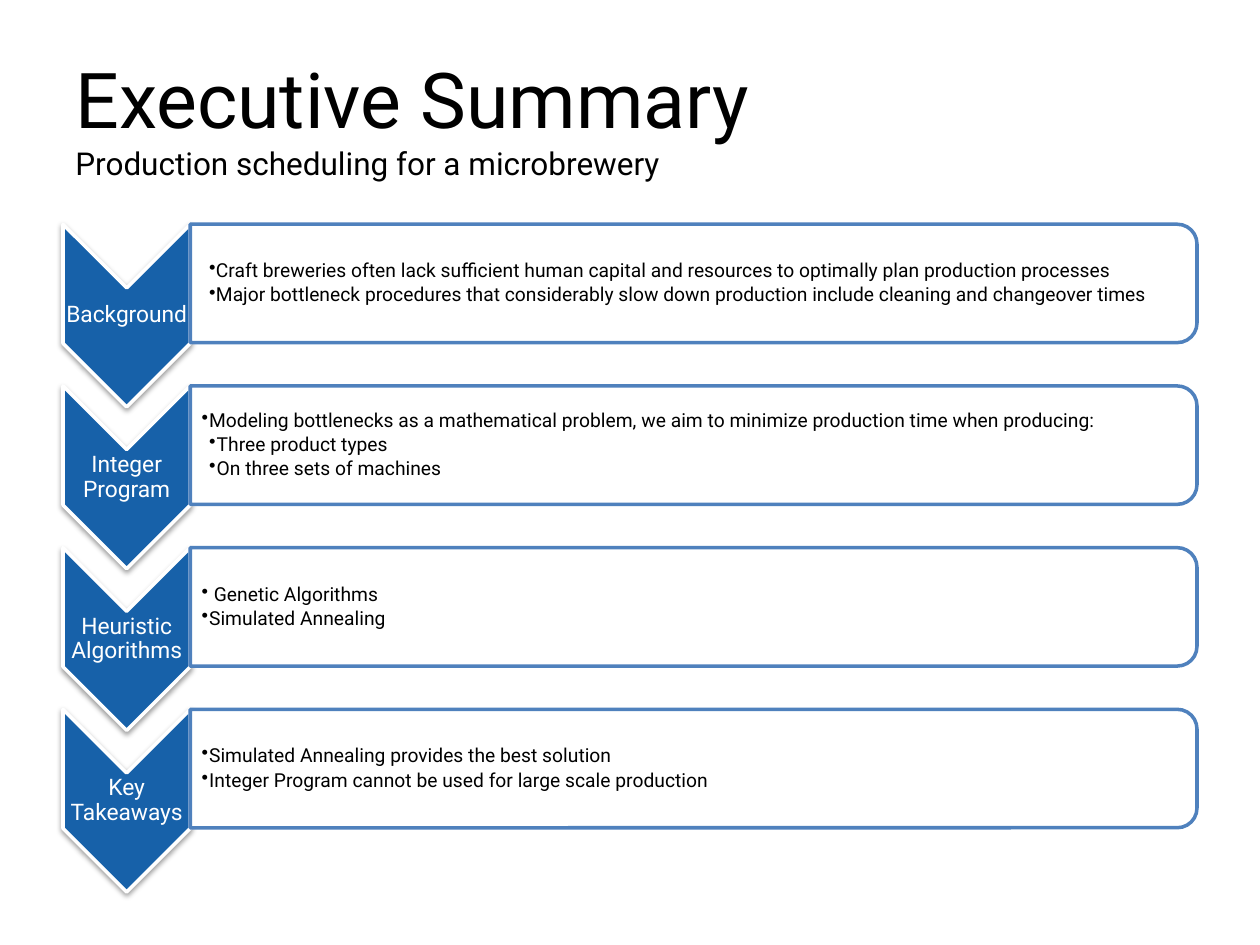
import pptx
import pptx.dml.color
import pptx.enum.shapes
import pptx.enum.text
import pptx.oxml
import pptx.util
from pptx.oxml.ns import nsdecls, qn
from lxml import etree

Inches = pptx.util.Inches
Pt = pptx.util.Pt
PresetShape = pptx.enum.shapes.MSO_SHAPE
Align = pptx.enum.text.PP_ALIGN

FONT = "Roboto"
COLORS = {"text": "000000", "white": "FFFFFF", "chevron": "1761A9", "border": "4F81BD"}
FIRST_TOP, LAST_TOP = 1.78, 5.63
BULLET_STEP = 0.06

SECTIONS = [
    ("Background", 0, [
        (1, "Craft breweries often lack sufficient human capital and resources "
            "to optimally plan production processes"),
        (1, "Major bottleneck procedures that considerably slow down production "
            "include cleaning and changeover times")]),
    ("Integer Program", -BULLET_STEP, [
        (1, "Modeling bottlenecks as a mathematical problem, we aim to minimize "
            "production time when producing:"),
        (2, "Three product types"),
        (2, "On three sets of machines")]),
    ("Heuristic Algorithms", -BULLET_STEP, [
        (1, " Genetic Algorithms"),
        (1, "Simulated Annealing")]),
    ("Key Takeaways", -BULLET_STEP, [
        (1, "Simulated Annealing provides the best solution"),
        (1, "Integer Program cannot be used for large scale production")]),
]


def rgb(name):
    """Return the named colour."""
    return pptx.dml.color.RGBColor.from_string(COLORS[name])


def add_run(paragraph, text, size, color="text"):
    """Add one styled run to a paragraph."""
    run = paragraph.add_run()
    run.text = text
    run.font.name = FONT
    run.font.size = Pt(size)
    run.font.color.rgb = rgb(color)


def add_text_frame(shapes, left, top, width, height, margins):
    """Add a wrapping, vertically centred text box and return its frame."""
    box = shapes.add_textbox(Inches(left), Inches(top), Inches(width), Inches(height))
    frame = box.text_frame
    frame.word_wrap = True
    frame.vertical_anchor = pptx.enum.text.MSO_ANCHOR.MIDDLE
    frame.margin_left, frame.margin_top, frame.margin_right, frame.margin_bottom = map(Inches, margins)
    return frame


def add_turned_shape(shapes, preset, left, top, width, height, fill, line):
    """Add a preset turned by 90 degrees so that it covers the given box."""
    shift = (width - height) / 2
    shape = shapes.add_shape(preset, Inches(left + shift), Inches(top - shift),
                             Inches(height), Inches(width))
    shape.rotation = 90
    shape.shadow.inherit = False
    shape.fill.solid()
    shape.fill.fore_color.rgb = rgb(fill)
    shape.line.color.rgb = rgb(line)
    shape.line.width = Pt(2)
    return shape


def add_drop_shadow(shape):
    """Give a shape a soft shadow straight below it."""
    effects = shape._element.spPr.find(qn("a:effectLst"))
    effects.append(pptx.oxml.parse_xml(
        f'<a:outerShdw {nsdecls("a")} blurRad="{Pt(3.1)}" dist="{Pt(1.6)}" dir="5400000" '
        'rotWithShape="0"><a:srgbClr val="000000"><a:alpha val="38000"/></a:srgbClr></a:outerShdw>'))


def add_title(slide, left, top, width, height):
    """Add the title with its subtitle on the next line."""
    frame = add_text_frame(slide.shapes, left, top, width, height, (0.1, 0.05, 0.1, 0.05))
    paragraph = frame.paragraphs[0]
    add_run(paragraph, "Executive Summary", 44)
    paragraph.add_line_break()
    add_run(paragraph, "Production scheduling for a microbrewery", 18)


def add_chevron(shapes, label, left, top, width, height):
    """Add a downward chevron with its label between notch and tip."""
    chevron = add_turned_shape(shapes, PresetShape.CHEVRON, left, top, width, height,
                               "chevron", "white")
    add_drop_shadow(chevron)
    notch = width / 2
    frame = add_text_frame(shapes, left, top + notch, width, height - 2 * notch, (0.01,) * 4)
    paragraph = frame.paragraphs[0]
    paragraph.alignment = Align.CENTER
    paragraph.line_spacing = 0.9
    add_run(paragraph, label, 13, "white")


def add_panel(shapes, bullets, hanging, left, top, width, height):
    """Add a panel rounded on the right with its bulleted lines."""
    add_turned_shape(shapes, PresetShape.ROUND_2_SAME_RECTANGLE, left, top, width, height,
                     "white", "border")
    inset = 0.05
    frame = add_text_frame(shapes, left, top + inset, width - inset, height - 2 * inset,
                           (0.09, 0.01, 0.01, 0.01))
    for index, (level, text) in enumerate(bullets):
        paragraph = frame.add_paragraph() if index else frame.paragraphs[0]
        paragraph.level = level
        paragraph.alignment = Align.LEFT
        paragraph.line_spacing = 0.9
        paragraph.space_after = Pt(2)
        properties = paragraph._p.get_or_add_pPr()
        properties.set("marL", str(Inches(BULLET_STEP * level)))
        properties.set("indent", str(Inches(hanging)))
        etree.SubElement(properties, qn("a:buChar")).set("char", "•")
        add_run(paragraph, text, 11)


def add_chevron_list(slide, left, width):
    """Add the evenly spaced rows of chevrons and panels as one group."""
    shapes = slide.shapes.add_group_shape().shapes
    pitch = (LAST_TOP - FIRST_TOP) / (len(SECTIONS) - 1)
    chevron_width = 1.01
    for index, (label, hanging, bullets) in enumerate(SECTIONS):
        top = FIRST_TOP + index * pitch
        add_chevron(shapes, label, left, top, chevron_width, 1.45)
        add_panel(shapes, bullets, hanging, left + chevron_width, top,
                  width - chevron_width, 0.94)


def main():
    """Build and save the slide."""
    presentation = pptx.Presentation()
    presentation.slide_width = Inches(10)
    presentation.slide_height = Inches(7.5)
    slide = presentation.slides.add_slide(presentation.slide_layouts[6])
    add_title(slide, 0.5, 0.3, 9, 1.25)
    add_chevron_list(slide, 0.5, 9)
    presentation.save("out.pptx")


if __name__ == "__main__":
    main()
